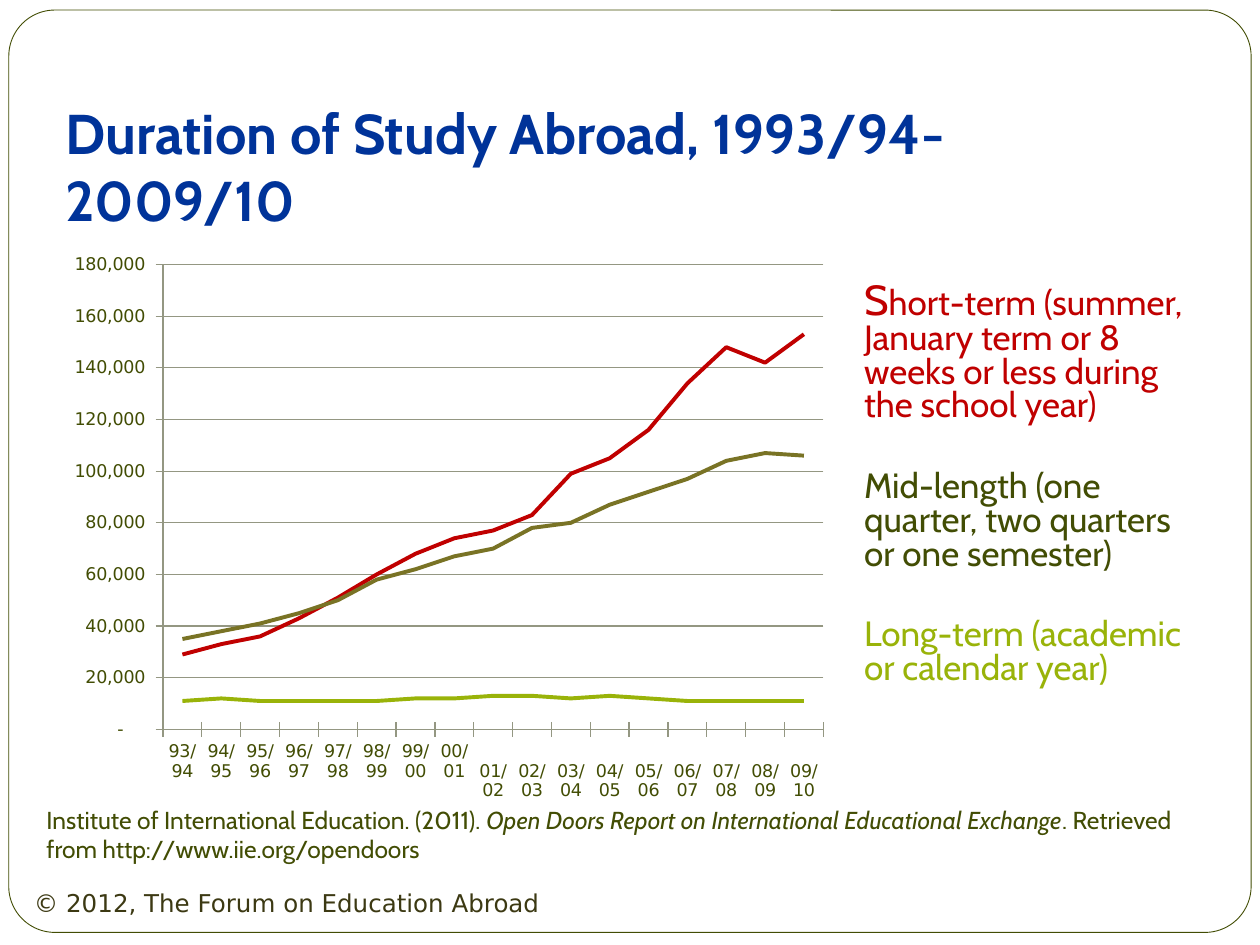
from lxml.etree import SubElement
from pptx import Presentation
from pptx.chart.data import CategoryChartData
from pptx.dml.color import RGBColor
from pptx.enum.chart import XL_CHART_TYPE as ChartType, XL_TICK_MARK as TickMark
from pptx.enum.shapes import MSO_SHAPE as Shape
from pptx.oxml.ns import qn
from pptx.util import Inches, Pt

WHITE = RGBColor(0xFF, 0xFF, 0xFF)
BLUE = RGBColor(0x00, 0x33, 0x99)
RED = RGBColor(0xC0, 0x00, 0x00)
DARK_GREEN = RGBColor(0x42, 0x4D, 0x04)
OLIVE = RGBColor(0x79, 0x73, 0x25)
LIME = RGBColor(0x99, 0xB3, 0x09)
BROWN = RGBColor(0x3C, 0x39, 0x13)
GRID_GRAY = RGBColor(0x94, 0x97, 0x82)

HEADING_FONT = "Cabin"
LABEL_FONT = "DejaVu Sans"

DURATIONS = [
    ("Short-term", RED, [29, 33, 36, 43, 51, 60, 68, 74, 77, 83, 99, 105, 116, 134, 148, 142, 153]),
    ("Mid-length", OLIVE, [35, 38, 41, 45, 50, 58, 62, 67, 70, 78, 80, 87, 92, 97, 104, 107, 106]),
    ("Long-term", LIME, [11, 12, 11, 11, 11, 11, 12, 12, 13, 13, 12, 13, 12, 11, 11, 11, 11]),
]


def school_year(start):
    label = f"{start % 100:02}/{(start + 1) % 100:02}"
    return f" {label}" if start > 2000 else label


def add_span(para, text, size=14, color=DARK_GREEN, font=HEADING_FONT, bold=False, italic=False):
    span = para.add_run()
    span.text = text
    span.font.size = Pt(size)
    span.font.name = font
    span.font.bold = bold
    span.font.italic = italic
    span.font.color.rgb = color


class SlideBuilder:
    def __init__(self, page):
        self.page = page

    def frame(self, left, top, width, height):
        box = self.page.shapes.add_shape(
            Shape.ROUNDED_RECTANGLE, Inches(left), Inches(top), Inches(width), Inches(height))
        box.adjustments[0] = 0.05
        box.shadow.inherit = False
        box.fill.solid()
        box.fill.fore_color.rgb = WHITE
        box.line.color.rgb = DARK_GREEN
        box.line.width = Pt(0.5)

    def text(self, left, top, width, height, paragraphs, line_spacing=None, gap=0):
        box = self.page.shapes.add_textbox(
            Inches(left), Inches(top), Inches(width), Inches(height))
        frame = box.text_frame
        frame.word_wrap = True
        for index, spans in enumerate(paragraphs):
            para = frame.add_paragraph() if index else frame.paragraphs[0]
            para.line_spacing = line_spacing
            if index:
                para.space_before = Pt(gap)
            for content, style in spans:
                add_span(para, content, **style)

    def line_chart(self, left, top, width, height, categories, series):
        data = CategoryChartData()
        data.categories = categories
        for name, _, thousands in series:
            data.add_series(name, [value * 1000 for value in thousands])
        chart = self.page.shapes.add_chart(
            ChartType.LINE, Inches(left), Inches(top), Inches(width), Inches(height), data).chart
        chart.has_legend = False
        chart.has_title = False
        chart.font.name = LABEL_FONT
        chart.font.size = Pt(10)
        chart.font.color.rgb = DARK_GREEN
        for line, (_, color, _) in zip(chart.plots[0].series, series):
            line.smooth = False
            line.format.line.color.rgb = color
            line.format.line.width = Pt(2.25)
        chart.plots[0].vary_by_categories = False
        for axis in (chart.category_axis, chart.value_axis):
            axis.major_tick_mark = TickMark.CROSS
            axis.minor_tick_mark = TickMark.NONE
            axis.format.line.color.rgb = GRID_GRAY
            axis.format.line.width = Pt(0.75)
        scale = chart.value_axis
        scale.minimum_scale, scale.maximum_scale, scale.major_unit = 0, 180000, 20000
        scale.has_major_gridlines = True
        scale.major_gridlines.format.line.color.rgb = GRID_GRAY
        scale.major_gridlines.format.line.width = Pt(0.75)
        scale.tick_labels.number_format = r'_(* #,##0_);_(* \(#,##0\);_(* "-"??_);_(@_)'
        scale.tick_labels.number_format_is_linked = False
        self.place_plot(chart, x=0.14, y=0.04, w=0.84, h=0.82)

    def place_plot(self, chart, **fractions):
        plot_area = chart.plots[0]._element.getparent()
        for old in plot_area.findall(qn("c:layout")):
            plot_area.remove(old)
        layout = SubElement(plot_area, qn("c:layout"))
        plot_area.insert(0, layout)
        manual = SubElement(layout, qn("c:manualLayout"))
        settings = {"layoutTarget": "inner", "xMode": "edge", "yMode": "edge", **fractions}
        for tag, value in settings.items():
            SubElement(manual, qn(f"c:{tag}")).set("val", str(value))


def main():
    deck = Presentation()
    deck.slide_width, deck.slide_height = Inches(10), Inches(7.5)
    builder = SlideBuilder(deck.slides.add_slide(deck.slide_layouts[6]))

    builder.frame(0.07, 0.08, 9.86, 7.32)
    builder.text(0.17, 7, 6.58, 0.5, [
        [("© 2012, The Forum on Education Abroad", dict(font=LABEL_FONT, color=BROWN))]])
    builder.text(0.42, 0.73, 9, 0.63, [
        [("Duration of Study Abroad, 1993/94- 2009/10", dict(size=32, color=BLUE, bold=True))]])
    builder.text(6.76, 2.2, 2.86, 3.65, [
        [("S", dict(size=24, color=RED)),
         ("hort-term (summer, January term or 8 weeks or less during the school year)",
          dict(size=20, color=RED))],
        [("Mid-length (one quarter, two quarters or one semester)", dict(size=20))],
        [("Long-term (academic or calendar year)", dict(size=20, color=LIME))],
    ], line_spacing=0.8, gap=27)
    builder.line_chart(0.42, 1.92, 6.24, 4.5,
                       [school_year(start) for start in range(1993, 2010)], DURATIONS)
    builder.text(0.27, 6.34, 9.45, 0.57, [
        [("Institute of International Education. (2011). ", {}),
         ("Open Doors Report on International Educational Exchange", dict(italic=True)),
         (". Retrieved from http://www.iie.org/opendoors", {})]])

    deck.save("out.pptx")


if __name__ == "__main__":
    main()
